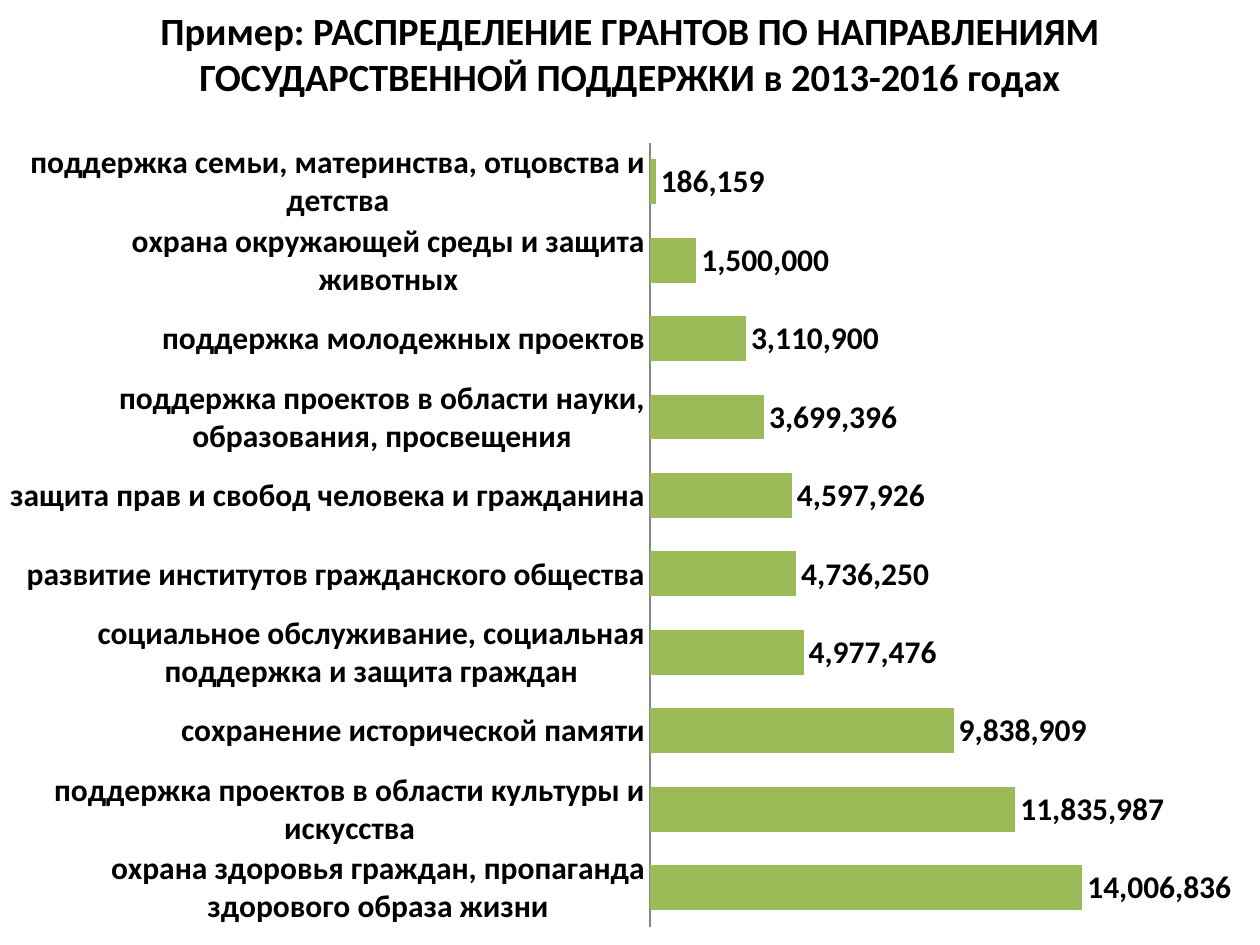
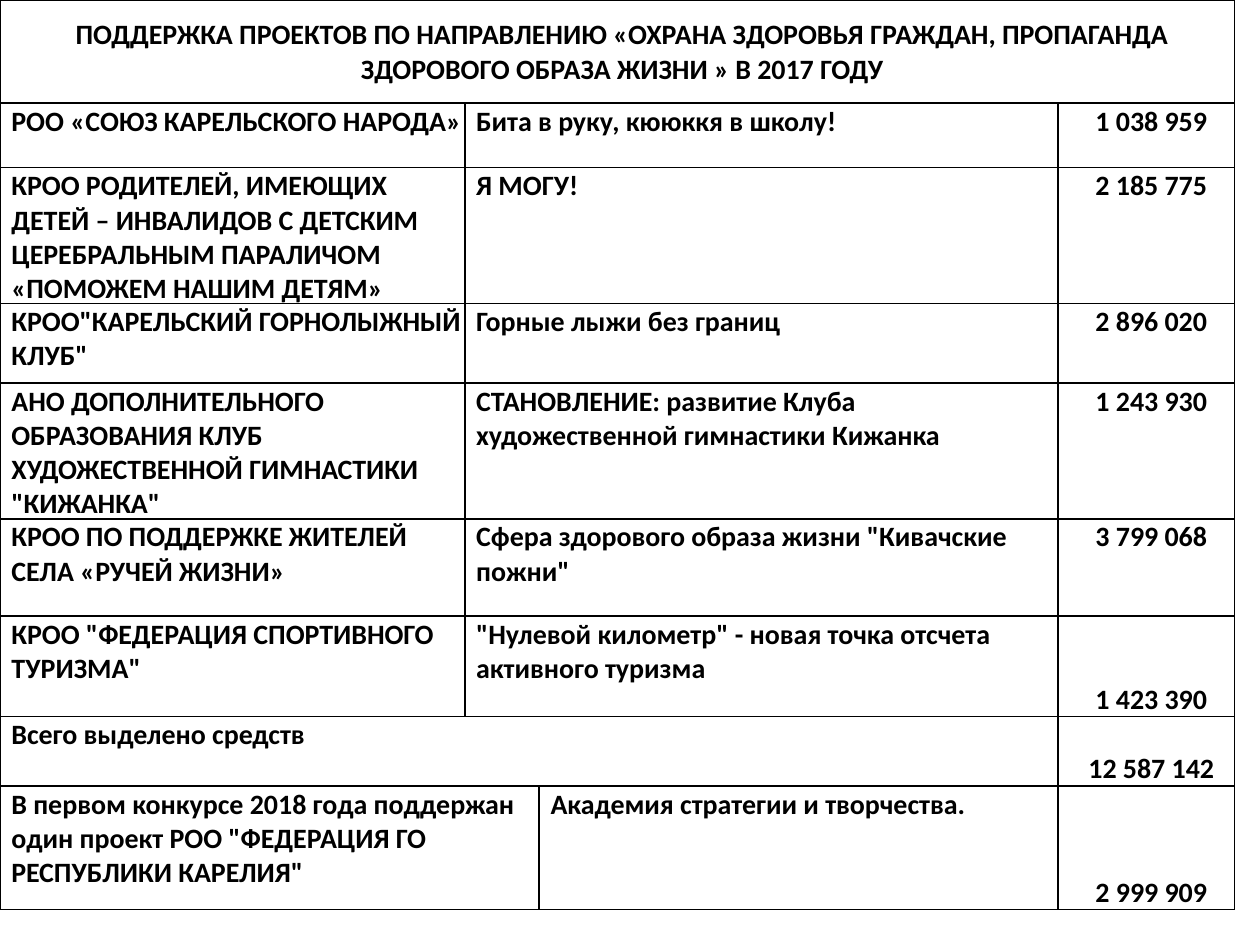
from dataclasses import dataclass

from lxml import etree
from pptx import Presentation
from pptx.chart.data import CategoryChartData
from pptx.dml.color import RGBColor
from pptx.enum.chart import XL_CHART_TYPE, XL_LABEL_POSITION, XL_TICK_MARK
from pptx.enum.text import MSO_ANCHOR, PP_ALIGN
from pptx.oxml import parse_xml
from pptx.oxml.ns import nsdecls, qn
from pptx.util import Cm, Pt

BAR_CLUSTERED = XL_CHART_TYPE.BAR_CLUSTERED
OUTSIDE_END = XL_LABEL_POSITION.OUTSIDE_END
NO_TICK = XL_TICK_MARK.NONE
TOP, MIDDLE, BOTTOM = MSO_ANCHOR.TOP, MSO_ANCHOR.MIDDLE, MSO_ANCHOR.BOTTOM
LEFT, CENTER = PP_ALIGN.LEFT, PP_ALIGN.CENTER

# Shared look
FONT = "Calibri"
BLACK = RGBColor(0x00, 0x00, 0x00)
GREEN = RGBColor(0x9B, 0xBB, 0x59)
AXIS_GREY = RGBColor(0x86, 0x86, 0x86)
PAGE_WIDTH, PAGE_HEIGHT = Cm(25.4), Cm(19.05)
NUMBER_FORMAT = "#,##0"

# Grants chart
CHART_TITLE = ("Пример: РАСПРЕДЕЛЕНИЕ ГРАНТОВ ПО НАПРАВЛЕНИЯМ "
               "ГОСУДАРСТВЕННОЙ ПОДДЕРЖКИ в 2013-2016 годах")
TITLE_HEIGHT = Cm(2.13)
CHART_TOP = Cm(2.51)
PLOT_AREA = {"x": 0.516, "y": 0.022, "w": 0.392, "h": 0.956}


@dataclass
class Grant:
    direction: str
    amount: int


GRANTS = [
    Grant("охрана здоровья граждан, пропаганда здорового образа жизни", 14006836),
    Grant("поддержка проектов в области культуры и искусства", 11835987),
    Grant("сохранение исторической памяти", 9838909),
    Grant("социальное обслуживание, социальная поддержка и защита граждан", 4977476),
    Grant("развитие институтов гражданского общества", 4736250),
    Grant("защита прав и свобод человека и гражданина", 4597926),
    Grant("поддержка проектов в области науки, образования, просвещения", 3699396),
    Grant("поддержка молодежных проектов", 3110900),
    Grant("охрана окружающей среды и защита животных", 1500000),
    Grant("поддержка семьи, материнства, отцовства и детства", 186159),
]

# Projects table: the spans give how many grid columns each text covers
COLUMN_WIDTHS = [Cm(9.37), Cm(1.5), Cm(10.46), Cm(3.56)]
WHOLE_ROW, PROJECT, TOTAL, NEXT_CONTEST = (4,), (1, 2, 1), (3, 1), (2, 1, 1)


@dataclass
class ProjectRow:
    height: Cm
    spans: tuple[int, ...]
    texts: tuple[str, ...]
    amount_anchor: MSO_ANCHOR = TOP


PROJECT_ROWS = [
    ProjectRow(Cm(2.08), WHOLE_ROW,
               ("ПОДДЕРЖКА ПРОЕКТОВ ПО НАПРАВЛЕНИЮ «ОХРАНА ЗДОРОВЬЯ ГРАЖДАН, "
                "ПРОПАГАНДА ЗДОРОВОГО ОБРАЗА ЖИЗНИ » В 2017 ГОДУ",), MIDDLE),
    ProjectRow(Cm(1.3), PROJECT,
               ("РОО «СОЮЗ КАРЕЛЬСКОГО НАРОДА»",
                "Бита в руку, кююккя в школу!", "1 038 959")),
    ProjectRow(Cm(2.44), PROJECT,
               ("КРОО РОДИТЕЛЕЙ, ИМЕЮЩИХ ДЕТЕЙ – ИНВАЛИДОВ С ДЕТСКИМ "
                "ЦЕРЕБРАЛЬНЫМ ПАРАЛИЧОМ «ПОМОЖЕМ НАШИМ ДЕТЯМ»",
                "Я МОГУ!", "2 185 775")),
    ProjectRow(Cm(1.6), PROJECT,
               ('КРОО"КАРЕЛЬСКИЙ ГОРНОЛЫЖНЫЙ КЛУБ"',
                "Горные лыжи без границ", "2 896 020")),
    ProjectRow(Cm(2.03), PROJECT,
               ('АНО ДОПОЛНИТЕЛЬНОГО ОБРАЗОВАНИЯ КЛУБ ХУДОЖЕСТВЕННОЙ '
                'ГИМНАСТИКИ "КИЖАНКА"',
                "СТАНОВЛЕНИЕ: развитие Клуба художественной гимнастики Кижанка",
                "1 243 930")),
    ProjectRow(Cm(1.96), PROJECT,
               ("КРОО ПО ПОДДЕРЖКЕ ЖИТЕЛЕЙ СЕЛА «РУЧЕЙ ЖИЗНИ»",
                'Сфера здорового образа жизни "Кивачские пожни"', "3 799 068")),
    ProjectRow(Cm(2.03), PROJECT,
               ('КРОО "ФЕДЕРАЦИЯ СПОРТИВНОГО ТУРИЗМА"',
                '"Нулевой километр" - новая точка отсчета активного туризма',
                "1 423 390"), BOTTOM),
    ProjectRow(Cm(1.4), TOTAL, ("Всего выделено средств", "12 587 142"), BOTTOM),
    ProjectRow(Cm(2.49), NEXT_CONTEST,
               ('В первом конкурсе 2018 года поддержан один проект РОО '
                '"ФЕДЕРАЦИЯ ГО РЕСПУБЛИКИ КАРЕЛИЯ"',
                "Академия стратегии и творчества.", "2 999 909"), BOTTOM),
]


def style_font(font, size: int) -> None:
    font.name = FONT
    font.size = Pt(size)
    font.bold = True
    font.color.rgb = BLACK


def write_text(frame, text: str, size: int, align: PP_ALIGN):
    frame.text = text
    frame.word_wrap = True
    para = frame.paragraphs[0]
    para.alignment = align
    for span in para.runs:
        style_font(span.font, size)
    return para


def add_title(page, text: str) -> None:
    box = page.shapes.add_textbox(0, 0, PAGE_WIDTH, TITLE_HEIGHT)
    write_text(box.text_frame, text, 22, CENTER)
    box.text_frame.vertical_anchor = MIDDLE


def place_plot(chart) -> None:
    """Fix the inner plot area as fractions of the chart."""
    sides = "".join(f'<c:{side}Mode val="edge"/>' for side in "xy")
    sizes = "".join(f'<c:{side} val="{part}"/>' for side, part in PLOT_AREA.items())
    layout = parse_xml(
        f'<c:layout {nsdecls("c")}><c:manualLayout><c:layoutTarget val="inner"/>'
        f"{sides}{sizes}</c:manualLayout></c:layout>")
    plot_area = chart.plots[0]._element.getparent()
    for old_layout in plot_area.findall(qn("c:layout")):
        plot_area.remove(old_layout)
    plot_area.insert(0, layout)


def add_grants_chart(page) -> None:
    data = CategoryChartData(number_format=NUMBER_FORMAT)
    data.categories = [grant.direction for grant in GRANTS]
    data.add_series("Series 1", [grant.amount for grant in GRANTS])
    frame = page.shapes.add_chart(BAR_CLUSTERED, 0, CHART_TOP, PAGE_WIDTH,
                                  PAGE_HEIGHT - CHART_TOP, data)
    chart = frame.chart
    chart.has_title = False
    chart.has_legend = False
    style_font(chart.font, 18)

    # Axes
    directions = chart.category_axis
    directions.major_tick_mark = NO_TICK
    directions.format.line.color.rgb = AXIS_GREY
    directions.format.line.width = Pt(0.75)
    style_font(directions.tick_labels.font, 18)
    amounts = chart.value_axis
    amounts.visible = False
    amounts.has_major_gridlines = False
    amounts.minimum_scale, amounts.maximum_scale = 0, 16000000

    # Bars and their labels
    plot = chart.plots[0]
    plot.gap_width = 75
    plot.vary_by_categories = False
    fill = plot.series[0].format.fill
    fill.solid()
    fill.fore_color.rgb = GREEN
    plot.has_data_labels = True
    labels = plot.data_labels
    labels.show_value = True
    labels.position = OUTSIDE_END
    labels.number_format = NUMBER_FORMAT
    labels.number_format_is_linked = False
    style_font(labels.font, 18)
    place_plot(chart)


def add_borders(cell) -> None:
    properties = cell._tc.get_or_add_tcPr()
    for place, side in enumerate(("lnL", "lnR", "lnT", "lnB")):
        line = etree.Element(qn(f"a:{side}"), w=str(Pt(1)))
        fill = etree.SubElement(line, qn("a:solidFill"))
        etree.SubElement(fill, qn("a:srgbClr"), val=str(BLACK))
        properties.insert(place, line)


def fill_cell(cell, text: str, align: PP_ALIGN, anchor: MSO_ANCHOR) -> None:
    para = write_text(cell.text_frame, text, 16, align)
    para._p.get_or_add_pPr().set("marL", str(Cm(0.2)))
    cell.vertical_anchor = anchor


def add_projects_table(page) -> None:
    height = sum(row.height for row in PROJECT_ROWS)
    table = page.shapes.add_table(len(PROJECT_ROWS), len(COLUMN_WIDTHS), 0, 0,
                                  sum(COLUMN_WIDTHS), height).table
    table.first_row = False
    table.horz_banding = False
    for column, width in zip(table.columns, COLUMN_WIDTHS):
        column.width = width
    for cell in table.iter_cells():
        cell.margin_left = cell.margin_right = cell.margin_top = Cm(0.03)
        cell.margin_bottom = 0
        cell.fill.background()
        add_borders(cell)

    for index, row in enumerate(PROJECT_ROWS):
        table.rows[index].height = row.height
        start = 0
        for span, text in zip(row.spans, row.texts):
            cell = table.cell(index, start)
            end = start + span
            if span > 1:
                cell.merge(table.cell(index, end - 1))
            if end == len(COLUMN_WIDTHS):
                fill_cell(cell, text, CENTER, row.amount_anchor)
            else:
                fill_cell(cell, text, LEFT, TOP)
            start = end


def main() -> None:
    deck = Presentation()
    deck.slide_width, deck.slide_height = PAGE_WIDTH, PAGE_HEIGHT
    blank = deck.slide_layouts[6]

    # Grants by direction
    page = deck.slides.add_slide(blank)
    add_title(page, CHART_TITLE)
    add_grants_chart(page)

    # Health projects
    add_projects_table(deck.slides.add_slide(blank))
    deck.save("out.pptx")


if __name__ == "__main__":
    main()
